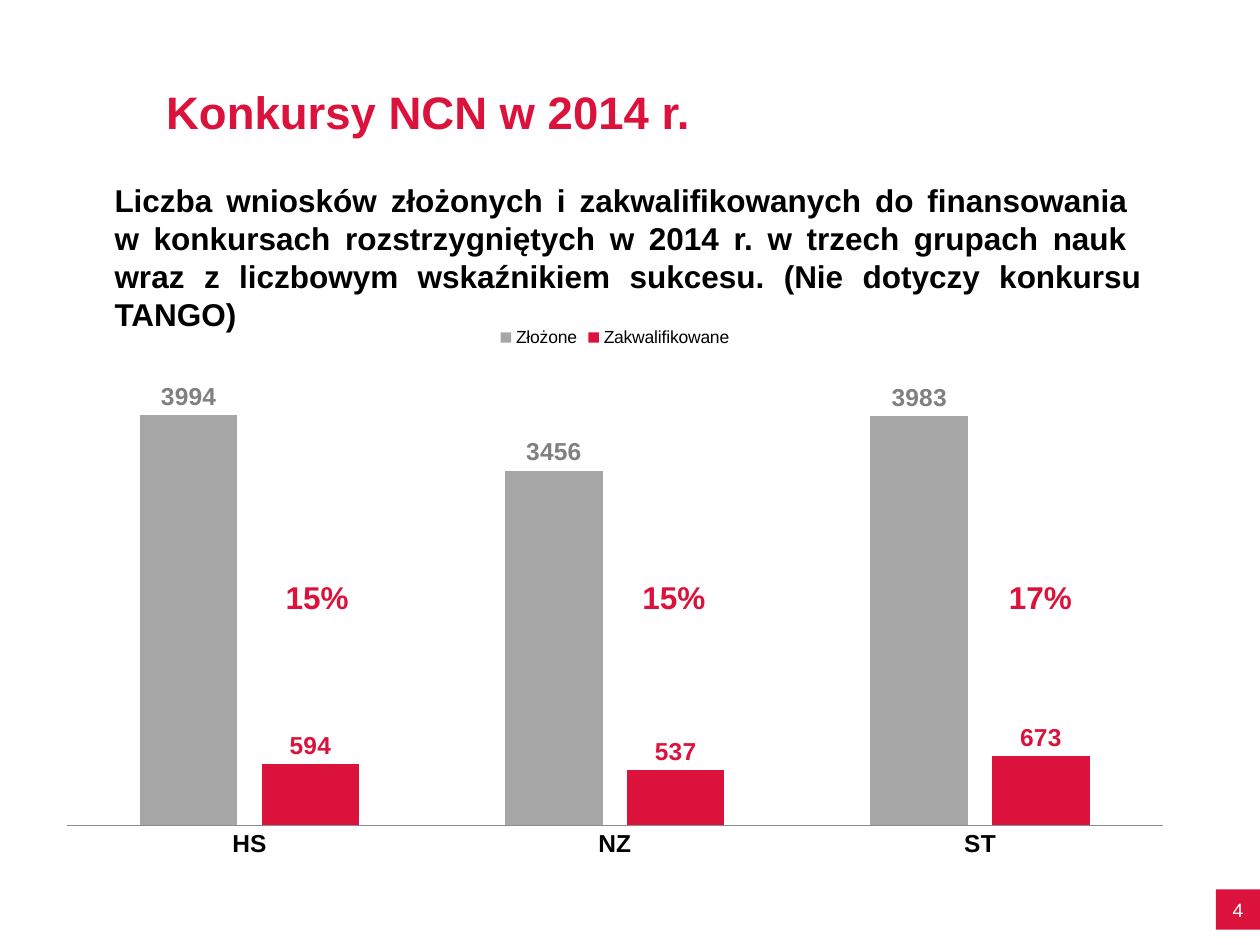
"""Build the slide on applications submitted and funded in 2014."""
from dataclasses import dataclass

from pptx import Presentation
from pptx import util as u
from pptx.chart import data as chart_data
from pptx.dml.color import RGBColor
from pptx.enum import chart as charts, shapes, text


@dataclass(frozen=True)
class Theme:
    font: str = "Arial"
    red: str = "DB133C"
    black: str = "000000"
    white: str = "FFFFFF"
    bar_grey: str = "A6A6A6"
    label_grey: str = "808080"
    axis_grey: str = "8C8C8C"
    title: int = 26
    body: int = 18
    label: int = 14
    number: int = 11
    legend: int = 10


theme = Theme()


def style(font, size, color, bold=False):
    font.name = theme.font
    font.size = u.Pt(size)
    font.bold = bold
    font.color.rgb = RGBColor.from_string(color)


def add_text(left, top, width, height, words, size, color, align=text.PP_ALIGN.LEFT):
    box = slide.shapes.add_textbox(u.Cm(left), u.Cm(top), u.Cm(width), u.Cm(height))
    frame = box.text_frame
    frame.word_wrap = True
    para = frame.paragraphs[0]
    para.text = words
    para.alignment = align
    for span in para.runs:
        style(span.font, size, color, True)
    return frame


deck = Presentation()
deck.slide_width, deck.slide_height = u.Cm(25.4), u.Cm(19.05)
slide = deck.slides.add_slide(deck.slide_layouts[6])

badge = slide.shapes.add_shape(
    shapes.MSO_SHAPE.RECTANGLE, u.Cm(24.51), u.Cm(17.93), u.Cm(0.89), u.Cm(0.81))
badge.shadow.inherit = False
badge.fill.solid()
badge.fill.fore_color.rgb = RGBColor.from_string(theme.red)
badge.line.fill.background()
frame = badge.text_frame
frame.margin_left = frame.margin_right = frame.margin_top = frame.margin_bottom = 0
frame.word_wrap = False
frame.vertical_anchor = text.MSO_ANCHOR.MIDDLE
frame.text = "4"
para = frame.paragraphs[0]
para.alignment = text.PP_ALIGN.CENTER
style(para.runs[0].font, theme.number, theme.white)

add_text(2.06, 3.53, 21.21, 3.33,
         "Liczba wniosków złożonych i zakwalifikowanych do finansowania \v"
         "w konkursach rozstrzygniętych w 2014 r. w trzech grupach nauk \v"
         "wraz z liczbowym wskaźnikiem sukcesu. (Nie dotyczy konkursu TANGO)",
         theme.body, theme.black, text.PP_ALIGN.JUSTIFY)

title = add_text(3.1, 1.32, 21.03, 1.6, "Konkursy NCN w 2014 r.", theme.title, theme.red)
title.vertical_anchor = text.MSO_ANCHOR.BOTTOM

applications = chart_data.CategoryChartData()
applications.categories = ["HS", "NZ", "ST"]
applications.add_series("Złożone", (3994, 3456, 3983))
applications.add_series("Zakwalifikowane", (594, 537, 673))
chart = slide.shapes.add_chart(
    charts.XL_CHART_TYPE.COLUMN_CLUSTERED,
    u.Cm(0.89), u.Cm(6.32), u.Cm(23.01), u.Cm(11.2), applications).chart
chart.has_title = False
style(chart.font, theme.legend, theme.black)
chart.has_legend = True
chart.legend.position = charts.XL_LEGEND_POSITION.TOP
chart.legend.include_in_layout = False
style(chart.legend.font, theme.legend, theme.black)

groups = chart.category_axis
groups.major_tick_mark = charts.XL_TICK_MARK.NONE
groups.format.line.color.rgb = RGBColor.from_string(theme.axis_grey)
style(groups.tick_labels.font, theme.label, theme.black, True)
counts = chart.value_axis
counts.visible = False
counts.has_major_gridlines = False
counts.minimum_scale, counts.maximum_scale = 0, 4500

plot = chart.plots[0]
plot.gap_width, plot.overlap = 150, -25
plot.vary_by_categories = False
bar_colors = ((theme.bar_grey, theme.label_grey), (theme.red, theme.red))
for series, (bar_color, label_color) in zip(plot.series, bar_colors):
    series.format.fill.solid()
    series.format.fill.fore_color.rgb = RGBColor.from_string(bar_color)
    labels = series.data_labels
    labels.show_value = True
    labels.position = charts.XL_LABEL_POSITION.OUTSIDE_END
    style(labels.font, theme.label, label_color, True)

for left, rate in ((5.51, "15%"), (12.7, "15%"), (20.09, "17%")):
    add_text(left, 11.53, 1.8, 1.02, rate, theme.body, theme.red)

deck.save("out.pptx")
